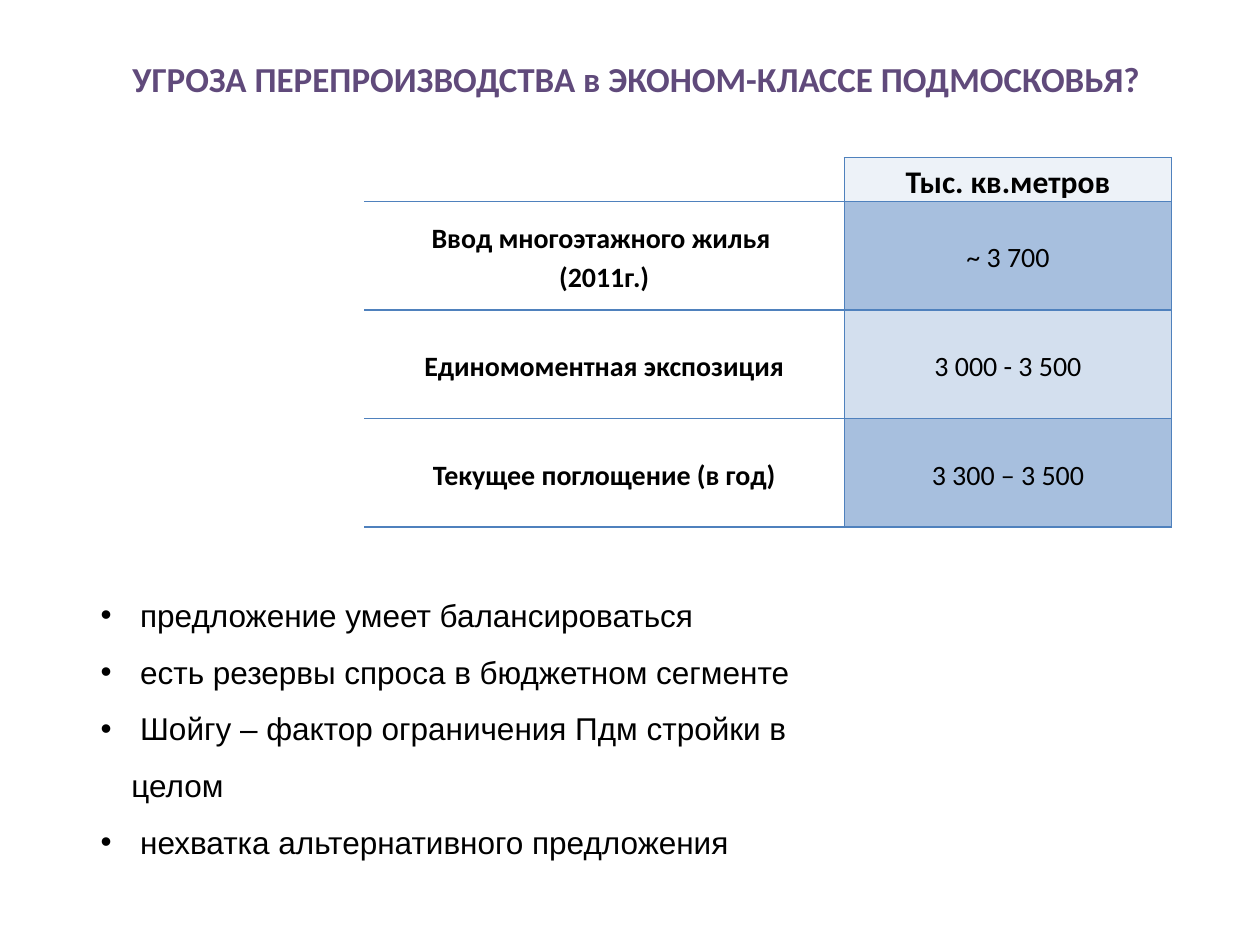
from dataclasses import dataclass

from lxml import etree
from pptx import Presentation
from pptx.dml.color import RGBColor
from pptx.enum.text import MSO_ANCHOR, PP_ALIGN
from pptx.oxml.ns import qn
from pptx.util import Cm, Pt

CENTER, LEFT = PP_ALIGN.CENTER, PP_ALIGN.LEFT
TOP, MIDDLE = MSO_ANCHOR.TOP, MSO_ANCHOR.MIDDLE


@dataclass(frozen=True)
class Theme:
    heading_font: str = "Calibri"
    body_font: str = "Arial"
    title: str = "604A7B"
    text: str = "000000"
    border: str = "4F81BD"
    white: str = "FFFFFF"
    header: str = "EDF2F8"
    dark_band: str = "A7BFDE"
    light_band: str = "D3DFEE"
    title_size: int = 20
    header_size: int = 18
    cell_size: int = 16
    bullet_size: int = 18


THEME = Theme()


def style_text(frame, font, size, color, bold, align, spacing):
    for paragraph in frame.paragraphs:
        paragraph.alignment = align
        paragraph.line_spacing = spacing
        for run in paragraph.runs:
            run.font.name = font
            run.font.size = Pt(size)
            run.font.bold = bold
            run.font.color.rgb = RGBColor.from_string(color)


def set_borders(cell, visible_sides):
    properties = cell._tc.get_or_add_tcPr()
    for index, side in enumerate("LRTB"):
        line = etree.Element(qn(f"a:ln{side}"), w=str(Pt(1)))
        if side in visible_sides:
            fill = etree.SubElement(line, qn("a:solidFill"))
            etree.SubElement(fill, qn("a:srgbClr"), val=THEME.border)
        else:
            etree.SubElement(line, qn("a:noFill"))
        properties.insert(index, line)


prs = Presentation()
prs.slide_width, prs.slide_height = Cm(25.4), Cm(19.05)
slide = prs.slides.add_slide(prs.slide_layouts[6])

title = slide.shapes.add_textbox(Cm(1.4), Cm(0), Cm(22.86), Cm(3.18)).text_frame
title.word_wrap = True
title.vertical_anchor = MIDDLE
title.text = "УГРОЗА ПЕРЕПРОИЗВОДСТВА в ЭКОНОМ-КЛАССЕ ПОДМОСКОВЬЯ?"
style_text(title, THEME.heading_font, THEME.title_size, THEME.title, True, CENTER, 1.0)

housing_rows = [
    ("", "Тыс. кв.метров", THEME.header),
    ("Ввод многоэтажного жилья \n(2011г.)", "~ 3 700", THEME.dark_band),
    ("Единомоментная экспозиция", "3 000 - 3 500", THEME.light_band),
    ("Текущее поглощение (в год)", "3 300 – 3 500", THEME.dark_band),
]
housing = slide.shapes.add_table(
    len(housing_rows), 2, Cm(7.34), Cm(3.18), Cm(16.28), Cm(7.44)
).table
housing.columns[0].width, housing.columns[1].width = Cm(9.68), Cm(6.6)

for row, (label, volume, band) in enumerate(housing_rows):
    is_header = row == 0
    housing.rows[row].height = Cm(0.81 if is_header else 2.19)
    size = THEME.header_size if is_header else THEME.cell_size
    label_sides = "RB" if is_header else "RTB"
    for column, (text, color, bold, sides) in enumerate([
        (label, THEME.white, True, label_sides),
        (volume, band, is_header, "LRTB"),
    ]):
        cell = housing.cell(row, column)
        cell.text_frame.text = text
        cell.margin_left = cell.margin_right = Cm(0.18)
        cell.margin_top = cell.margin_bottom = Cm(0)
        cell.vertical_anchor = TOP if is_header else MIDDLE
        cell.fill.solid()
        cell.fill.fore_color.rgb = RGBColor.from_string(color)
        style_text(cell.text_frame, THEME.heading_font, size, THEME.text, bold, CENTER, 1.15)
        set_borders(cell, sides)

conclusions = slide.shapes.add_textbox(Cm(1.78), Cm(11.51), Cm(16.08), Cm(5.64)).text_frame
conclusions.word_wrap = True
conclusions.text = "\n".join([
    " предложение умеет балансироваться",
    " есть резервы спроса в бюджетном сегменте",
    " Шойгу – фактор ограничения Пдм стройки в целом",
    " нехватка альтернативного предложения",
])
style_text(conclusions, THEME.body_font, THEME.bullet_size, THEME.text, False, LEFT, 1.5)
for paragraph in conclusions.paragraphs:
    properties = paragraph._p.get_or_add_pPr()
    properties.set("marL", str(Cm(0.62)))
    properties.set("indent", str(-Cm(0.62)))
    etree.SubElement(properties, qn("a:buFont"), typeface=THEME.body_font)
    etree.SubElement(properties, qn("a:buChar"), char="•")

prs.save("out.pptx")
